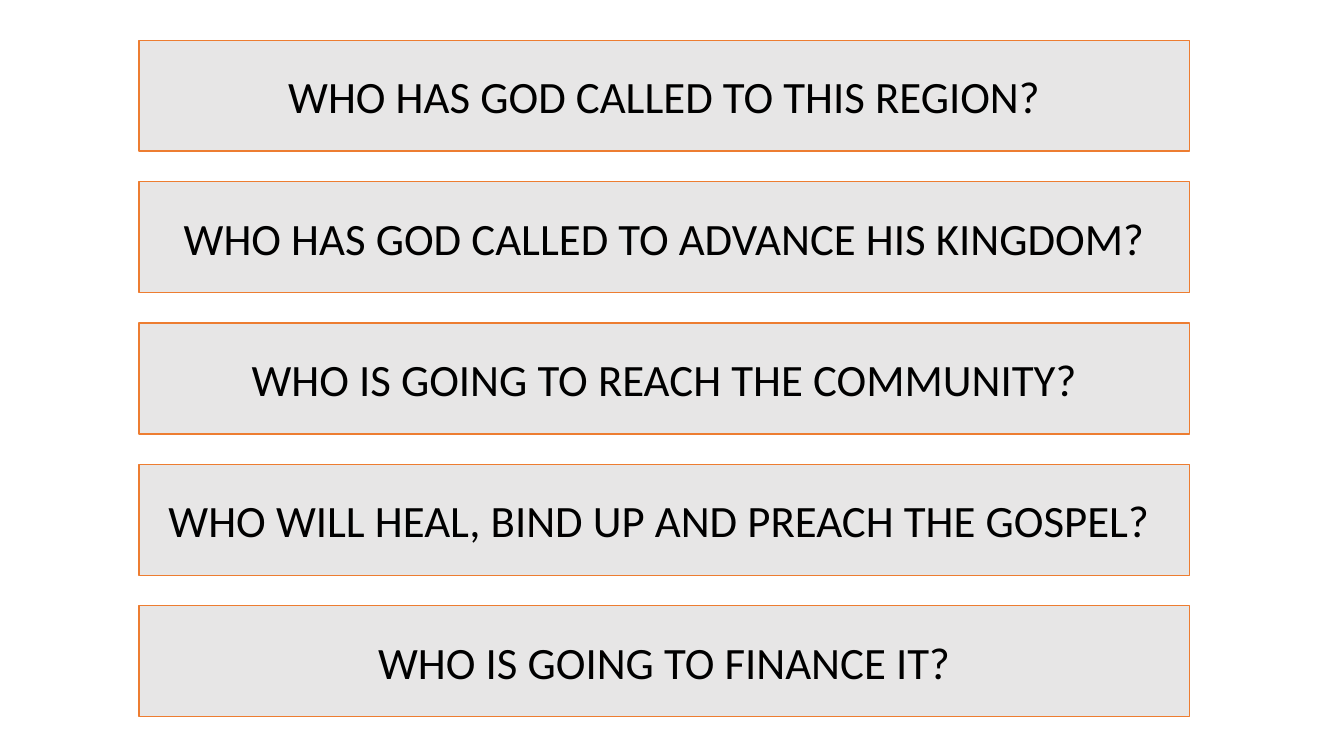
from pptx import Presentation
from pptx.dml.color import RGBColor
from pptx.enum.shapes import MSO_SHAPE as Shape
from pptx.enum.text import MSO_ANCHOR as Anchor, PP_ALIGN as Align
from pptx.util import Inches, Pt

PANEL_GREY = RGBColor(0xE7, 0xE6, 0xE6)
BORDER_ORANGE = RGBColor(0xED, 0x7D, 0x31)
BLACK = RGBColor(0, 0, 0)

QUESTIONS = [
    "WHO HAS GOD CALLED TO THIS REGION?",
    "WHO HAS GOD CALLED TO ADVANCE HIS KINGDOM?",
    "WHO IS GOING TO REACH THE COMMUNITY?",
    "WHO WILL HEAL, BIND UP AND PREACH THE GOSPEL? ",
    "WHO IS GOING TO FINANCE IT?",
]
PANEL_HEIGHT = 1.1


def add_question(slide, question, left, top, width, height):
    panel = slide.shapes.add_shape(
        Shape.RECTANGLE, Inches(left), Inches(top), Inches(width), Inches(height))
    panel.shadow.inherit = False
    panel.fill.solid()
    panel.fill.fore_color.rgb = PANEL_GREY
    panel.line.color.rgb = BORDER_ORANGE
    panel.line.width = Pt(1)

    # Centred question
    frame = panel.text_frame
    frame.word_wrap = True
    frame.vertical_anchor = Anchor.MIDDLE
    paragraph = frame.paragraphs[0]
    paragraph.alignment = Align.CENTER
    run = paragraph.add_run()
    run.text = question
    run.font.name = "Calibri"
    run.font.size = Pt(32)
    run.font.color.rgb = BLACK


def add_question_stack(slide, left, top, width, height):
    # Panels spread evenly from the top to the bottom of the box
    pitch = (height - PANEL_HEIGHT) / (len(QUESTIONS) - 1)
    for row, question in enumerate(QUESTIONS):
        add_question(slide, question, left, top + row * pitch, width, PANEL_HEIGHT)


def main():
    deck = Presentation()
    deck.slide_width = Inches(13.33)
    deck.slide_height = Inches(7.5)
    slide = deck.slides.add_slide(deck.slide_layouts[6])
    add_question_stack(slide, left=1.38, top=0.4, width=10.42, height=6.71)
    deck.save("out.pptx")


if __name__ == "__main__":
    main()
